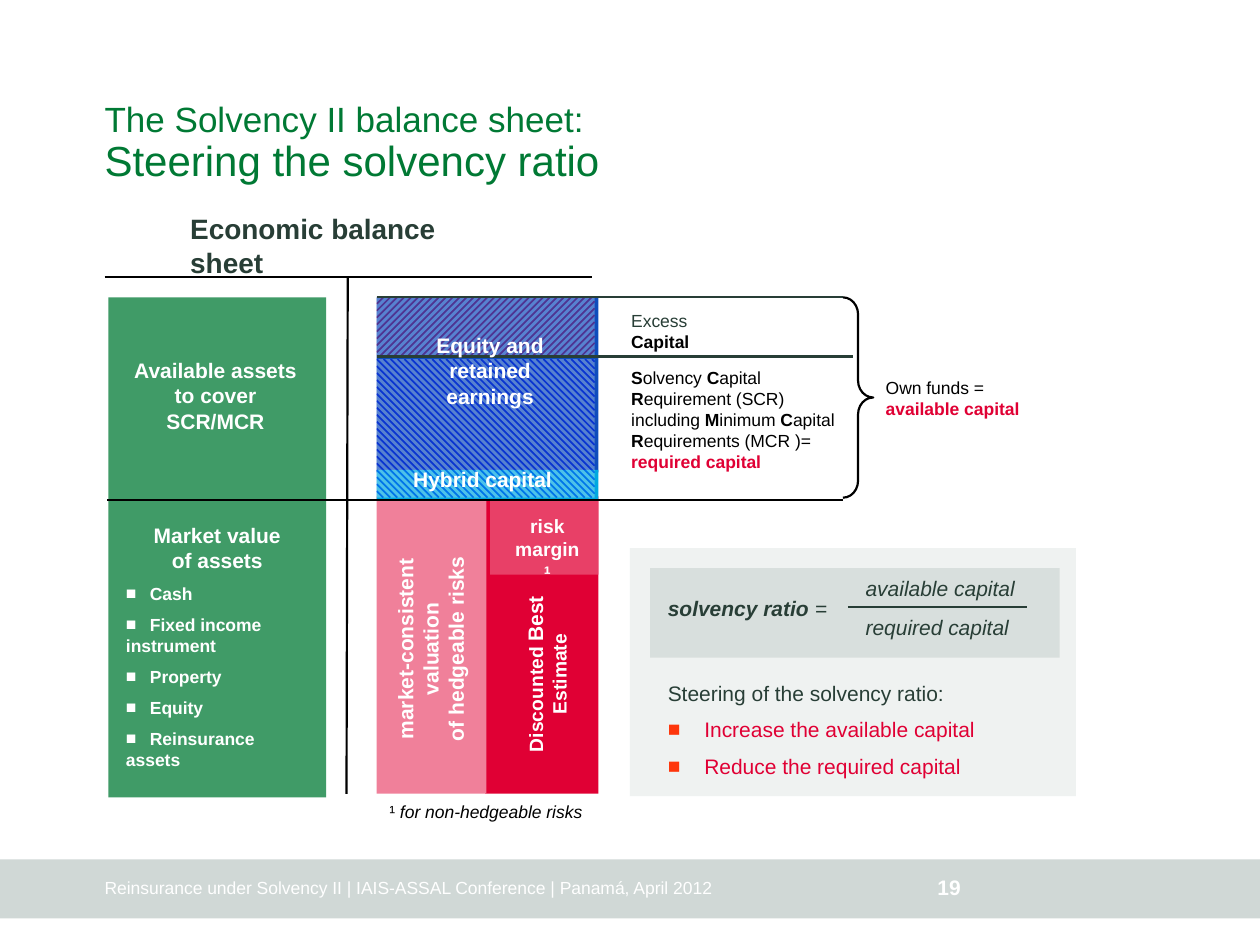
from lxml import etree
from pptx import Presentation
from pptx.dml.color import RGBColor as RGB
from pptx.enum.dml import MSO_PATTERN as PATTERN
from pptx.enum.shapes import MSO_CONNECTOR as CONN, MSO_SHAPE as SHAPE
from pptx.enum.text import MSO_ANCHOR as ANCHOR, PP_ALIGN as ALIGN
from pptx.oxml.ns import qn
from pptx.util import Inches, Pt

C = {
    "white": "FFFFFF", "black": "000000", "band": "D0D8D6", "title": "007934",
    "dark": "283E36", "green": "409B67", "red": "E00034", "margin": "E84067",
    "pink": "F0809A", "blue": "0F4DBC", "cyan": "00A9E0", "hatch": "0000FF",
    "panel": "EFF2F1", "formula": "D8DFDD", "bullet": "FE360B",
}
INSET = 0.06


def rgb(name):
    return RGB.from_string(C[name])


def within(box, x, y, w, h):
    """Box with an offset and size in inches, measured from a region's corner."""
    return box[0] + x, box[1] + y, w, h


def rect(s, box, fill, shape=SHAPE.RECTANGLE):
    sp = s.shapes.add_shape(shape, *map(Inches, box))
    sp.shadow.inherit = False
    sp.line.fill.background()
    if fill:
        sp.fill.solid()
        sp.fill.fore_color.rgb = rgb(fill)
    else:
        sp.fill.background()
    return sp


def hatch(s, box, pattern, color):
    """Rectangle with a see-through pattern."""
    sp = rect(s, box, "white")
    sp.fill.patterned()
    sp.fill.pattern = pattern
    sp.fill.fore_color.rgb, sp.fill.back_color.rgb = rgb(color), rgb("white")
    for clr in sp.fill._xPr.iter(qn("a:srgbClr")):
        etree.SubElement(clr, qn("a:alpha"), val="30000")


def line(s, box, x1, y1, x2, y2, color="black", width=1.25):
    x, y = box[:2]
    cn = s.shapes.add_connector(
        CONN.STRAIGHT, *map(Inches, (x + x1, y + y1, x + x2, y + y2)))
    cn.line.color.rgb, cn.line.width = rgb(color), Pt(width)
    etree.SubElement(cn._element.spPr, qn("a:effectLst"))


def write(p, runs, size, color, bold=False, italic=False):
    """Runs are strings, or (text, changes) pairs; a newline is a line break."""
    for item in runs:
        text, own = item if isinstance(item, tuple) else (item, {})
        for i, part in enumerate(text.split("\n")):
            if i:
                p.add_line_break()
            if part:
                r = p.add_run()
                r.text = part
                f = r.font
                f.name, f.size = "Arial", Pt(own.get("size", size))
                f.bold, f.italic = own.get("bold", bold), own.get("italic", italic)
                f.color.rgb = rgb(own.get("color", color))


def frame(sp, anchor=ANCHOR.TOP, inset=INSET, wrap=True):
    tf = sp.text_frame
    tf.word_wrap, tf.vertical_anchor = wrap, anchor
    tf.margin_left = tf.margin_right = Inches(inset)
    tf.margin_top = tf.margin_bottom = Inches(inset)
    return tf


def text(s, box, runs, size=12, color="white", align=ALIGN.LEFT, anchor=ANCHOR.TOP,
         inset=INSET, wrap=True, rotation=0, **style):
    sp = s.shapes.add_textbox(*map(Inches, box))
    sp.rotation = rotation
    p = frame(sp, anchor, inset, wrap).paragraphs[0]
    p.alignment = align
    write(p, runs, size, color, **style)
    return sp.text_frame


def bullet(p, color, indent=0, tab=0):
    pPr = p._p.get_or_add_pPr()
    pPr.set("marL", str(Inches(indent)))
    pPr.set("indent", str(-Inches(indent)))
    clr = etree.SubElement(pPr, qn("a:buClr"))
    etree.SubElement(clr, qn("a:srgbClr"), val=C[color])
    etree.SubElement(pPr, qn("a:buFont"), typeface="Arial")
    etree.SubElement(pPr, qn("a:buChar"), char="■")
    if tab:
        tabs = etree.SubElement(pPr, qn("a:tabLst"))
        etree.SubElement(tabs, qn("a:tab"), pos=str(Inches(tab)), algn="l")


def footer(s, box):
    rect(s, box, "band")
    plain = dict(anchor=ANCHOR.BOTTOM, inset=0, wrap=False)
    text(s, within(box, 0.83, 0.16, 6.46, 0.15),
         ["Reinsurance under Solvency II | IAIS-ASSAL Conference | Panamá, April 2012"],
         10, **plain)
    text(s, within(box, 7.44, 0.12, 0.2, 0.2), ["19"], bold=True, **plain)


def heading(s, box):
    sp = s.shapes.title
    sp.left, sp.top, sp.width, sp.height = map(Inches, box)
    p = frame(sp, ANCHOR.BOTTOM, 0).paragraphs[0]
    p.alignment, p.line_spacing = ALIGN.LEFT, 0.9
    write(p, ["The Solvency II balance sheet:\n",
              ("Steering the solvency ratio", {"size": 24})], 20, "title")


def account(s, box):
    """T-account lines with their caption."""
    text(s, within(box, 0.62, -0.45, 2.6, 0.39), ["Economic balance sheet"], 16, "dark",
         anchor=ANCHOR.MIDDLE, bold=True)
    line(s, box, 1.93, 0, 1.92, box[3])
    line(s, box, 0, 0, box[2], 0)


def assets(s, box):
    sp = rect(s, box, "green")
    p = frame(sp, ANCHOR.MIDDLE).paragraphs[0]
    p.alignment = ALIGN.CENTER
    write(p, ["Market value\nof assets"], 12, "white", bold=True)
    text(s, within(box, 0.09, 0.42, 1.52, 0.52), ["Available assets\nto cover SCR/MCR"],
         align=ALIGN.CENTER, bold=True)
    tf = text(s, within(box, 0.08, 2.21, 1.54, 1.45), [])
    items = ["Cash", "Fixed income instrument", "Property", "Equity", "Reinsurance assets"]
    for i, item in enumerate(items):
        p = tf.add_paragraph() if i else tf.paragraphs[0]
        bullet(p, "white", tab=0.19)
        p.space_before = Pt(5.6 if i else 0)
        write(p, ["\t" + item], 10, "white", bold=True)


def liabilities(s, box):
    """Technical provisions: hedgeable risks left, best estimate and margin right."""
    half = box[2] / 2
    white = dict(align=ALIGN.CENTER, bold=True)
    rect(s, within(box, half - 0.02, 0, half + 0.02, box[3]), "red")
    rect(s, within(box, half + 0.02, 0.03, half - 0.02, 0.59), "margin")
    rect(s, within(box, 0, 0, half - 0.01, box[3]), "pink")
    text(s, within(box, -0.64, 0.85, 2.13, 0.72),
         ["market-consistent valuation\nof hedgeable risks"],
         anchor=ANCHOR.BOTTOM, rotation=270, **white)
    text(s, within(box, 0.48, 1.16, 1.73, 0.5),
         ["Discounted ", ("Best", {"size": 12}), " Estimate"], 11, rotation=270, **white)
    text(s, within(box, 1.02, 0.08, 0.67, 0.5),
         ["risk margin", ("¹", {"size": 12})], 11, **white)
    text(s, within(box, 0.02, box[3], 1.69, 0.28),
         ["¹ ", ("for non-hedgeable risks", {"italic": True})], 10, "black",
         align=ALIGN.CENTER, wrap=False)


def own_funds(s, box):
    """Equity and hybrid capital, split into excess and required capital."""
    bold, key = {"bold": True}, {"bold": True, "color": "red"}
    rect(s, within(box, 0, 0, 1.76, 1.39), "blue")
    rect(s, within(box, 0, 1.37, 1.76, 0.24), "cyan")
    hatch(s, within(box, 0, 0.49, 1.73, 1.1), PATTERN.WIDE_DOWNWARD_DIAGONAL, "hatch")
    hatch(s, within(box, 0, 0, 1.73, 0.47), PATTERN.WIDE_UPWARD_DIAGONAL, "red")
    line(s, box, 0, 0.47, 3.78, 0.47, "dark")
    line(s, box, 0, 0, 3.7, 0, "dark")
    line(s, box, 3.7, 1.61, -2.14, 1.61, width=1.5)
    text(s, within(box, 0.15, 0.42, 1.5, 0.52), ["Equity and\nretained earnings"],
         align=ALIGN.CENTER, anchor=ANCHOR.BOTTOM, bold=True)
    text(s, within(box, 0.23, 1.28, 1.57, 0.32), ["Hybrid capital"],
         anchor=ANCHOR.BOTTOM, bold=True)
    text(s, within(box, 1.96, 0.12, 1.03, 0.29),
         [("Excess", {"color": "dark"}), (" Capital", bold)], 10, "black",
         anchor=ANCHOR.MIDDLE)
    text(s, within(box, 1.96, 0.49, 1.81, 0.72),
         [("S", bold), "olvency ", ("C", bold), "apital\n", ("R", bold),
          "equirement (SCR)\nincluding ", ("M", bold), "inimum ", ("C", bold), "apital ",
          ("R", bold), "equirements (MCR )= ", ("required capital", key)], 10, "black")
    brace = rect(s, within(box, 3.7, 0, 0.24, 1.59), None, SHAPE.RIGHT_BRACE)
    brace.adjustments[0], brace.adjustments[1] = 0.56, 0.5
    brace.line.color.rgb, brace.line.width = rgb("black"), Pt(1.25)
    text(s, within(box, 3.98, 0.57, 1.97, 0.32),
         ["Own funds =\n", ("available capital", key)], 10, "black")


def ratio_panel(s, box):
    low = dict(color="dark", anchor=ANCHOR.BOTTOM)
    rect(s, box, "panel")
    rect(s, within(box, 0.16, 0.16, 3.25, 0.71), "formula")
    text(s, within(box, 0.24, 0.32, 1.42, 0.32),
         [("solvency ratio", {"bold": True}), " ="], italic=True, **low)
    for y, term in ((0.16, "available capital"), (0.47, "required capital")):
        text(s, within(box, 1.81, y, 1.65, 0.32), [term], italic=True, **low)
    line(s, box, 1.73, 0.47, 3.15, 0.47, "dark")
    tf = text(s, within(box, 0.24, 0.97, 3.23, 0.92),
              ["Steering of the solvency ratio:"], **low)
    for item in ("Increase the available capital", "Reduce the required capital"):
        p = tf.add_paragraph()
        bullet(p, "bullet", indent=0.29)
        p.space_before = Pt(6.5)
        write(p, [item], 12, "red")


def main():
    prs = Presentation()
    prs.slide_width, prs.slide_height = Inches(10), Inches(7.5)
    s = prs.slides.add_slide(prs.slide_layouts[5])
    footer(s, (0, 6.82, 10, 0.47))
    heading(s, (0.83, 0.52, 6.38, 0.95))
    assets(s, (0.86, 2.36, 1.73, 3.97))
    account(s, (0.83, 2.2, 3.87, 4.1))
    liabilities(s, (2.99, 3.94, 1.76, 2.36))
    own_funds(s, (2.99, 2.36, 5.95, 1.61))
    ratio_panel(s, (5, 4.35, 3.54, 1.97))
    prs.save("out.pptx")


if __name__ == "__main__":
    main()
